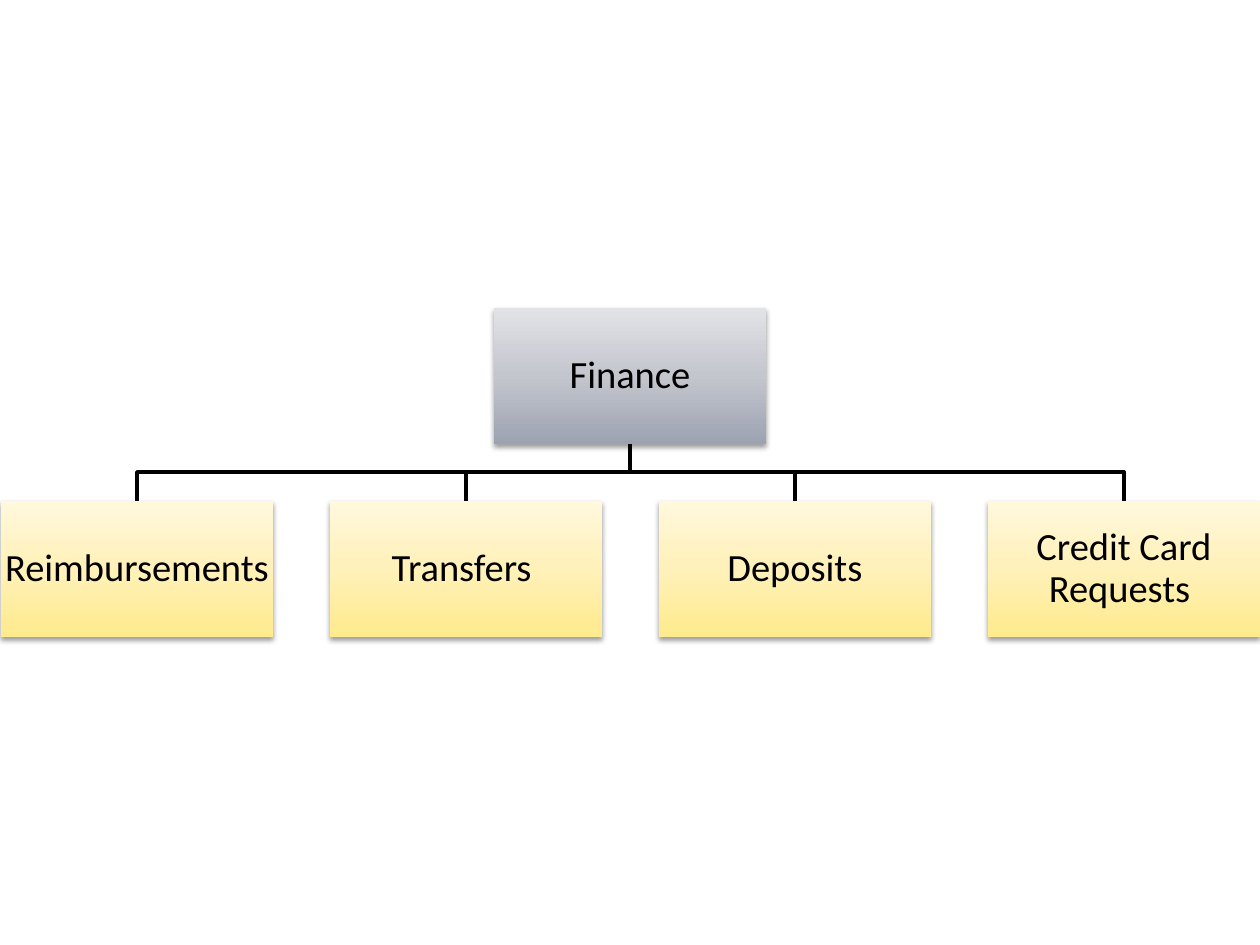
from pptx import Presentation
from pptx.dml.color import RGBColor
from pptx.enum.shapes import MSO_SHAPE as SHAPE
from pptx.enum.text import MSO_ANCHOR as ANCHOR, PP_ALIGN as ALIGN
from pptx.oxml import parse_xml
from pptx.oxml.ns import nsdecls, qn
from pptx.util import Pt

PX = 914400 // 126
BOX_W, BOX_H = 272, 136
COLORS = {"ink": "000000", "shadow": "000000"}
GRADIENTS = {
    "root": {0: "9CA2B0", 50: "C4C6CE", 100: "E2E3E7"},
    "child": {0: "FFEA8D", 50: "FFF1B9", 100: "FFF8DD"},
}
ROOT = "Finance"
CHILDREN = ["Reimbursements", "Transfers ", "Deposits", "Credit Card Requests "]


def rgb(name):
    return RGBColor.from_string(COLORS[name])


def add_text(sp, text, size=22, font="Calibri", color="ink", spacing=0.9, inset=2):
    tf = sp.text_frame
    tf.word_wrap = True
    tf.vertical_anchor = ANCHOR.MIDDLE
    tf.margin_left = tf.margin_right = tf.margin_top = tf.margin_bottom = inset * PX
    p = tf.paragraphs[0]
    p.alignment = ALIGN.CENTER
    p.line_spacing = spacing
    r = p.add_run()
    r.text = text
    r.font.size = Pt(size)
    r.font.name = font
    r.font.color.rgb = rgb(color)


def set_gradient(sp, stops):
    """Fill from the bottom edge upwards, with stops given in percent."""
    sp.fill.gradient()
    sp.fill.gradient_angle = 90
    gs_list = sp._element.spPr.find(qn("a:gradFill")).find(qn("a:gsLst"))
    for gs in list(gs_list):
        gs_list.remove(gs)
    for pos, color in stops.items():
        gs_list.append(parse_xml(
            f'<a:gs {nsdecls("a")} pos="{pos * 1000}"><a:srgbClr val="{color}"/></a:gs>'))


def add_shadow(sp):
    sp.shadow.inherit = False
    sp._element.spPr.find(qn("a:effectLst")).append(parse_xml(
        f'<a:outerShdw {nsdecls("a")} blurRad="{Pt(3.1)}" dist="{Pt(1.6)}" dir="5400000" '
        f'rotWithShape="0"><a:srgbClr val="{COLORS["shadow"]}"><a:alpha val="38000"/>'
        '</a:srgbClr></a:outerShdw>'))


def add_box(s, x, y, text, kind):
    sp = s.shapes.add_shape(SHAPE.RECTANGLE, x * PX, y * PX, BOX_W * PX, BOX_H * PX)
    set_gradient(sp, GRADIENTS[kind])
    sp.line.fill.background()
    add_shadow(sp)
    add_text(sp, text)


def add_branch(s, x1, y1, x2, y2):
    """Draw an open elbow line that turns halfway down."""
    mid = (y1 + y2) // 2
    builder = s.shapes.build_freeform(x1, y1, scale=PX)
    builder.add_line_segments([(x1, mid), (x2, mid), (x2, y2)], close=False)
    sp = builder.convert_to_shape()
    sp.fill.background()
    sp.line.color.rgb = rgb("ink")
    sp.line.width = Pt(2)
    sp.shadow.inherit = False


def add_org_chart(s, x, y, w, h):
    root_x = x + (w - BOX_W) // 2
    child_y = y + h - BOX_H
    pitch = (w - BOX_W) // (len(CHILDREN) - 1)
    child_xs = [x + i * pitch for i in range(len(CHILDREN))]
    for child_x in reversed(child_xs):
        add_branch(s, root_x + BOX_W // 2, y + BOX_H, child_x + BOX_W // 2, child_y)
    add_box(s, root_x, y, ROOT, "root")
    for child_x, text in zip(child_xs, CHILDREN):
        add_box(s, child_x, child_y, text, "child")


def main():
    prs = Presentation()
    prs.slide_width, prs.slide_height = 1260 * PX, 945 * PX
    s = prs.slides.add_slide(prs.slide_layouts[6])
    add_org_chart(s, 1, 308, 1259, 329)
    prs.save("out.pptx")


if __name__ == "__main__":
    main()
